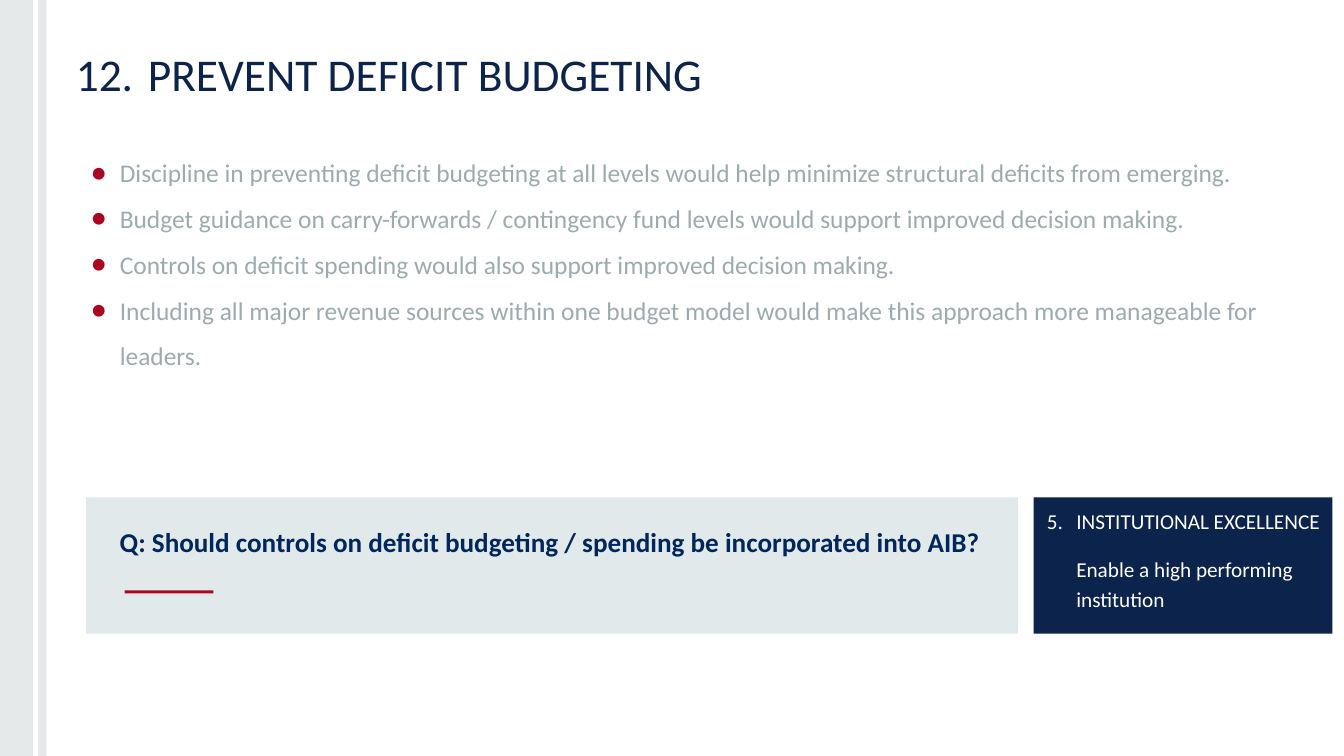
from lxml.etree import SubElement
from pptx import Presentation
from pptx.dml.color import RGBColor
from pptx.enum.shapes import MSO_SHAPE
from pptx.enum.text import MSO_ANCHOR, MSO_AUTO_SIZE, PP_ALIGN
from pptx.oxml.ns import qn
from pptx.util import Inches, Pt

COLORS = {
    "navy": "0C234B",
    "question": "00275B",
    "red": "AB0520",
    "gray": "9EABAE",
    "panel": "E2E9EB",
    "white": "FFFFFF",
}
FONT = "Calibri"
BULLETS = [
    "Discipline in preventing deficit budgeting at all levels would help minimize structural deficits from emerging.",
    "Budget guidance on carry-forwards / contingency fund levels would support improved decision making.",
    "Controls on deficit spending would also support improved decision making.",
    "Including all major revenue sources within one budget model would make this approach more manageable for leaders.",
]
PANEL_TOP, PANEL_HEIGHT = 8.14, 2.23


def add_block(slide, left, top, width, height, color, opacity=100):
    """Add a plain filled rectangle and return it."""
    shape = slide.shapes.add_shape(
        MSO_SHAPE.RECTANGLE, Inches(left), Inches(top), Inches(width), Inches(height))
    shape.shadow.inherit = False
    shape.line.fill.background()
    shape.fill.solid()
    shape.fill.fore_color.rgb = RGBColor.from_string(COLORS[color])
    if opacity < 100:
        fill_color = shape.fill._xPr.find(qn("a:solidFill"))[0]
        SubElement(fill_color, qn("a:alpha"), val=str(opacity * 1000))
    return shape


def place(shape, left, top, width, height):
    """Move and size a placeholder."""
    shape.left, shape.top = Inches(left), Inches(top)
    shape.width, shape.height = Inches(width), Inches(height)


def set_frame(shape, anchor=MSO_ANCHOR.TOP, left=0.1, bottom=0.1):
    """Set wrapping, anchor and margins, and return the text frame."""
    frame = shape.text_frame
    frame.word_wrap = True
    frame.auto_size = MSO_AUTO_SIZE.NONE
    frame.vertical_anchor = anchor
    frame.margin_left, frame.margin_bottom = Inches(left), Inches(bottom)
    frame.margin_top = frame.margin_right = Inches(0.1)
    return frame


def write(paragraph, text, size, color, bold=False, margin=0, indent=0,
          spacing=1.0, before=0, bullet=False):
    """Format a paragraph and add its text as one run."""
    properties = paragraph._p.get_or_add_pPr()
    properties.set("marL", str(Inches(margin)))
    properties.set("indent", str(Inches(indent)))
    if bullet:
        bullet_color = SubElement(properties, qn("a:buClr"))
        SubElement(bullet_color, qn("a:srgbClr"), val=COLORS["red"])
        SubElement(properties, qn("a:buFont"), typeface=FONT)
        SubElement(properties, qn("a:buChar"), char="●")
    paragraph.alignment = PP_ALIGN.LEFT
    paragraph.line_spacing = spacing
    paragraph.space_before = Pt(before)
    run = paragraph.add_run()
    run.text = text
    run.font.name = FONT
    run.font.size = Pt(size)
    run.font.bold = bold
    run.font.color.rgb = RGBColor.from_string(COLORS[color])


def add_side_bands(slide, height):
    """Add the gray band and white stripe along the left edge."""
    add_block(slide, 0, 0, 0.76, height, "gray", opacity=25)
    add_block(slide, 0.54, 0, 0.08, height, "white")


def add_title(slide):
    """Fill the title placeholder."""
    title = slide.shapes.title
    place(title, 1.12, 0.66, 19.75, 0.99)
    write(set_frame(title).paragraphs[0], "12.\tPREVENT DEFICIT BUDGETING",
          53.5, "navy", margin=1.2, indent=-1.18)


def add_bullets(slide):
    """Fill the body placeholder with the bullet list."""
    body = slide.placeholders[1]
    place(body, 1.36, 2.22, 19.51, 5.04)
    frame = set_frame(body, bottom=0.08)
    for index, text in enumerate(BULLETS):
        paragraph = frame.add_paragraph() if index else frame.paragraphs[0]
        write(paragraph, text, 30, "gray", margin=0.5, indent=-0.47,
              spacing=1.5, bullet=True)


def add_question(slide):
    """Add the question panel with its red underline."""
    add_block(slide, 1.41, PANEL_TOP, 15.25, PANEL_HEIGHT, "panel")
    question = slide.shapes.add_textbox(
        Inches(1.86), Inches(8.54), Inches(14.8), Inches(0.65))
    write(set_frame(question, MSO_ANCHOR.MIDDLE).paragraphs[0],
          "Q: Should controls on deficit budgeting / spending be incorporated into AIB?",
          32, "question", bold=True)
    add_block(slide, 2.04, 9.66, 1.45, 0.05, "red")


def add_goal(slide):
    """Add the navy panel naming the strategic goal."""
    panel = add_block(slide, 16.91, PANEL_TOP, 4.89, PANEL_HEIGHT, "navy")
    frame = set_frame(panel, left=0.2, bottom=0.05)
    write(frame.paragraphs[0], "5.\tINSTITUTIONAL EXCELLENCE", 25, "white",
          margin=0.5, indent=-0.48, spacing=1.2)
    write(frame.add_paragraph(), "Enable a high performing institution", 25, "white",
          margin=0.5, spacing=1.2, before=20)


def main():
    """Build and save the slide."""
    presentation = Presentation()
    presentation.slide_width = Inches(21.99)
    presentation.slide_height = Inches(12.37)
    slide = presentation.slides.add_slide(presentation.slide_layouts[1])
    add_side_bands(slide, 12.37)
    add_title(slide)
    add_bullets(slide)
    add_question(slide)
    add_goal(slide)
    presentation.save("out.pptx")


if __name__ == "__main__":
    main()
